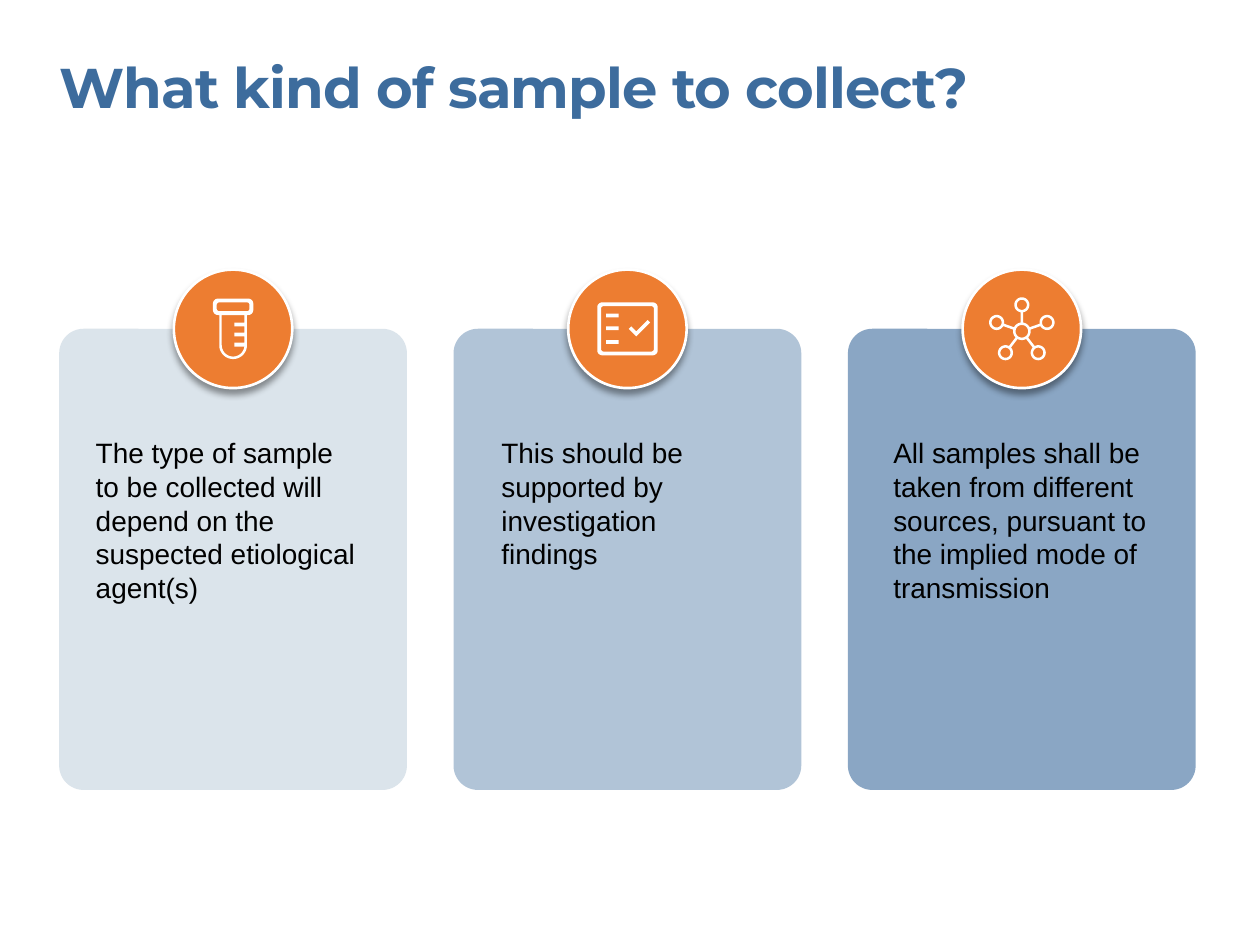
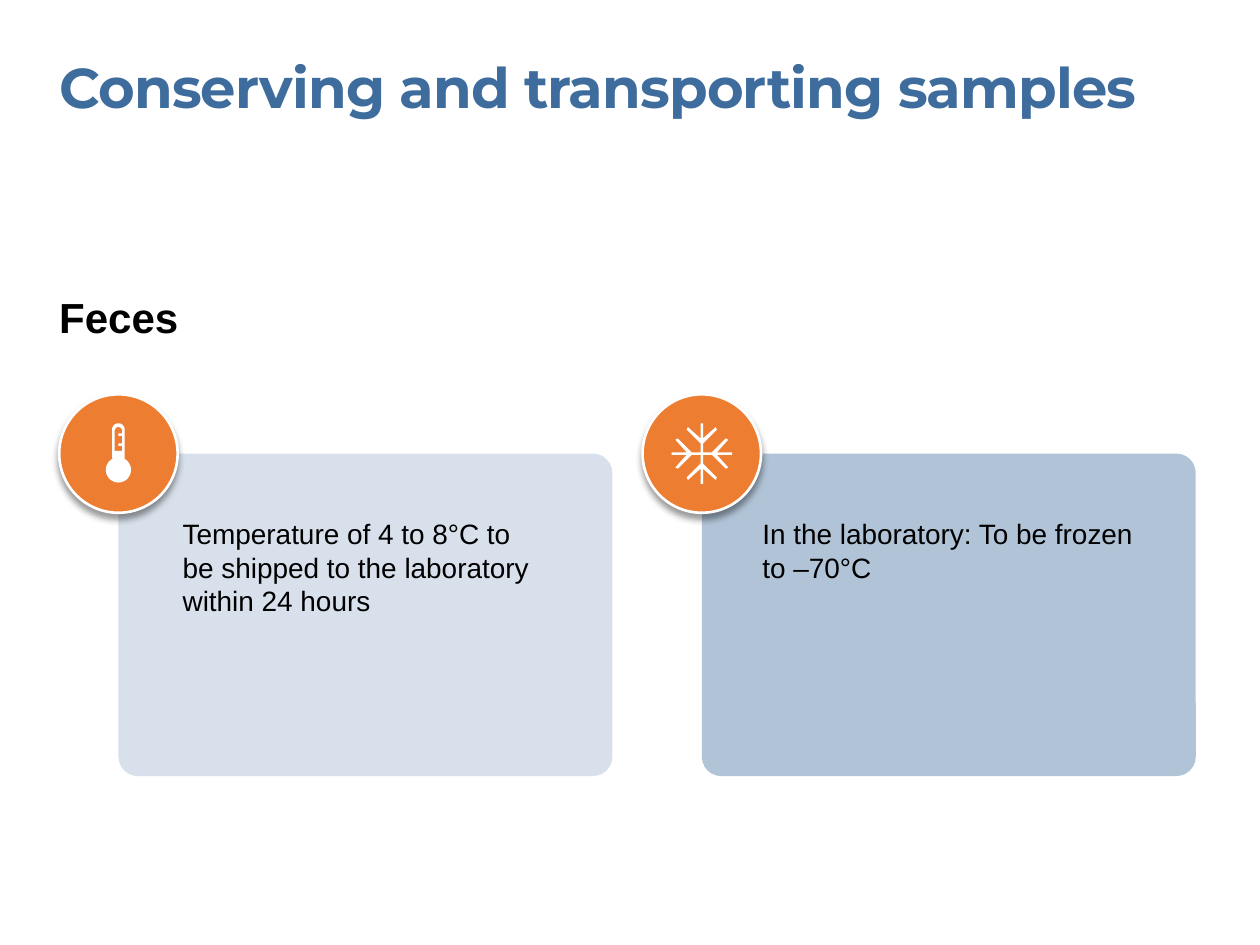
from dataclasses import dataclass
from math import atan2, cos, degrees, hypot, radians, sin
from typing import Any

from lxml import etree
from pptx import Presentation
from pptx import util as u
from pptx.dml.color import RGBColor
from pptx.enum import shapes, text
from pptx.oxml.ns import qn

PX = 9144  # EMU per px, 100 px to the inch
BADGE = 94
COLOURS = {
    "blue": "3D6C9D",
    "pale": "DBE4EB",
    "orange": "ED7D31",
    "white": "FFFFFF",
    "black": "000000",
}
FRAME_FORMAT = {
    "margin_left": 0,
    "margin_top": 0,
    "margin_right": 0,
    "margin_bottom": 0,
    "word_wrap": True,
    "auto_size": text.MSO_AUTO_SIZE.SHAPE_TO_FIT_TEXT,
}
TITLE_FONT = {"name": "Montserrat", "size": u.Pt(32), "bold": True}
HEADING_FONT = {"name": "Arial", "size": u.Pt(24), "bold": True}
BODY_FONT = {"name": "Arial", "size": u.Pt(16), "bold": False}

Point = tuple[float, float]
Contour = list[Point]


@dataclass(frozen=True)
class Box:
    left: int
    top: int
    width: int
    height: int

    def emu(self) -> list[int]:
        return [v * PX for v in (self.left, self.top, self.width, self.height)]


@dataclass(frozen=True)
class Card:
    panel: Box
    corner: float
    colour: str
    opacity: int
    badge_x: int
    icon: list[Contour]
    words: str
    words_box: Box


def set_all(target: Any, values: dict[str, Any]) -> None:
    for name, value in values.items():
        setattr(target, name, value)


def rgb(colour: str) -> RGBColor:
    return RGBColor.from_string(COLOURS[colour])


def paint(shape: Any, colour: str) -> None:
    """Give a shape a plain fill, with neither line nor shadow."""
    shape.shadow.inherit = False
    shape.fill.solid()
    shape.fill.fore_color.rgb = rgb(colour)
    shape.line.fill.background()


def set_alpha(colour_element: Any, percent: int) -> None:
    etree.SubElement(colour_element, qn("a:alpha"), val=str(percent * 1000))


# Icon contours are measured from the centre of the badge;
# a contour inside another one cuts a hole.
def arc(x: float, y: float, radius: float, start: int, end: int) -> Contour:
    """Points from one angle to another, in degrees, clockwise from the right."""
    steps = max(4, abs(end - start) // 10)
    angles = [radians(start + (end - start) * i / steps) for i in range(steps + 1)]
    return [(x + radius * cos(a), y + radius * sin(a)) for a in angles]


def rectangle(left: int, top: int, right: int, bottom: int) -> Contour:
    return [(left, top), (right, top), (right, bottom), (left, bottom)]


def rounded(left: int, top: int, right: int, bottom: int, radius: int) -> Contour:
    centres = rectangle(left + radius, top + radius, right - radius, bottom - radius)
    return [
        point
        for i, (x, y) in enumerate(centres)
        for point in arc(x, y, radius, 180 + 90 * i, 270 + 90 * i)
    ]


def ring(x: int, y: int, outer: int, inner: int) -> list[Contour]:
    return [arc(x, y, radius, 0, 350) for radius in (outer, inner)]


def test_tube() -> list[Contour]:
    glass = [
        [(-r, -11), (r, -11), *arc(0, 13, r, 0, 180)] for r in (11, 9)
    ]
    marks = [rectangle(1, y, 9, y + 3) for y in (-5, 3, 11)]
    return [rounded(-16, -24, 16, -11, 4), rounded(-13, -21, 13, -14, 2), *glass, *marks]


def checklist() -> list[Contour]:
    lines = [rectangle(-17, y, -7, y + 3) for y in (-12, -2, 9)]
    tick = [(7, 6), (18, -5), (16, -7), (7, 2), (3, -2), (1, 0)]
    return [rounded(-24, -21, 24, 21, 4), rounded(-21, -18, 21, 18, 2), *lines, tick]


def network() -> list[Contour]:
    hub_y, hub_radius, node_radius = 2, 7, 6
    contours = ring(0, hub_y, hub_radius, 5)
    for x, y in ((0, -19), (20, -5), (13, 19), (-13, 19), (-20, -5)):
        reach = hypot(x, y - hub_y)
        dx, dy = x / reach, (y - hub_y) / reach
        near, far = hub_radius, reach - node_radius
        spoke = [
            (dx * along - dy * side, hub_y + dy * along + dx * side)
            for along, side in ((near, -1), (near, 1), (far, 1), (far, -1))
        ]
        contours += [*ring(x, y, node_radius, 4), spoke]
    return contours


def thermometer() -> list[Contour]:
    neck = round(degrees(atan2(-9, 5)))
    body = arc(0, -19, 5, 180, 360) + arc(0, 13, 10, neck, 180 - neck)
    bore = [*arc(0, -18, 3, 180, 360), (3, -2), (-3, -2)]
    marks = [rectangle(0, y, 3, y + 2) for y in (-16, -8)]
    return [body, bore, *marks]


def snowflake() -> list[Contour]:
    quarter = [(1, -24), (1, -12), (11, -21), (12, -19), (1, -8), (1, -1),
               (8, -1), (19, -12), (21, -11), (12, -1), (24, -1)]
    outline: Contour = []
    for _ in range(4):
        outline += quarter
        quarter = [(-y, x) for x, y in quarter]
    return [outline]


def add_text(slide: Any, box: Box, words: str, font: dict[str, Any],
             colour: str = "black") -> Any:
    frame = slide.shapes.add_textbox(*box.emu()).text_frame
    set_all(frame, FRAME_FORMAT)
    run = frame.paragraphs[0].add_run()
    run.text = words
    set_all(run.font, font)
    run.font.color.rgb = rgb(colour)
    return run


def add_title(slide: Any, words: str, height: int) -> None:
    run = add_text(slide, Box(47, 42, 855, height), words, TITLE_FONT, "blue")
    run.font._element.set("spc", "-50")


def add_panel(slide: Any, card: Card) -> None:
    panel = slide.shapes.add_shape(
        shapes.MSO_SHAPE.ROUNDED_RECTANGLE, *card.panel.emu())
    panel.adjustments[0] = card.corner
    paint(panel, card.colour)
    if card.opacity < 100:
        set_alpha(panel._element.spPr.find(".//" + qn("a:srgbClr")), card.opacity)


def add_badge(slide: Any, card: Card) -> None:
    """Draw the circle centred on the panel's top edge, with its icon."""
    centre_y = card.panel.top
    circle = Box(card.badge_x - BADGE // 2, centre_y - BADGE // 2, BADGE, BADGE)
    badge = slide.shapes.add_shape(shapes.MSO_SHAPE.OVAL, *circle.emu())
    paint(badge, "orange")
    badge.line.color.rgb = rgb("white")
    badge.line.width = u.Pt(1.5)
    shadow = etree.SubElement(
        badge._element.spPr.find(qn("a:effectLst")), qn("a:outerShdw"),
        blurRad=str(u.Pt(4)), dist=str(u.Pt(3)), dir="5400000",
        algn="t", rotWithShape="0")
    set_alpha(etree.SubElement(shadow, qn("a:srgbClr"), val=COLOURS["black"]), 40)

    placed = [
        [((card.badge_x + x) * PX, (centre_y + y) * PX) for x, y in contour]
        for contour in card.icon
    ]
    builder = slide.shapes.build_freeform(*placed[0][0])
    for contour in placed:
        builder.move_to(*contour[0])
        builder.add_line_segments(contour[1:], close=True)
    paint(builder.convert_to_shape(), "white")


def add_cards(slide: Any, cards: list[Card]) -> None:
    for card in cards:
        add_panel(slide, card)
    for card in cards:
        add_badge(slide, card)
        add_text(slide, card.words_box, card.words, BODY_FONT)


def build_sample_kinds(slide: Any) -> None:
    add_title(slide, "What kind of sample to collect?", 54)
    contents = [
        ("pale", 100, test_tube(), Box(76, 346, 212, 135),
         "The type of sample to be collected will depend on the suspected "
         "etiological agent(s)"),
        ("blue", 40, checklist(), Box(398, 346, 204, 108),
         "This should be supported by investigation findings"),
        ("blue", 60, network(), Box(709, 346, 204, 135),
         "All samples shall be taken from different sources, pursuant to "
         "the implied mode of transmission"),
    ]
    cards = []
    for i, (colour, opacity, icon, words_box, words) in enumerate(contents):
        panel = Box(47 + 313 * i, 261, 276, 366)
        cards.append(Card(panel, 0.07, colour, opacity,
                          panel.left + panel.width // 2, icon, words, words_box))
    add_cards(slide, cards)


def build_conserving(slide: Any) -> None:
    add_title(slide, "Conserving and transporting samples", 108)
    add_text(slide, Box(47, 231, 785, 40), "Feces", HEADING_FONT)
    contents = [
        (20, thermometer(), Box(145, 410, 290, 81),
         "Temperature of 4 to 8°C to be shipped to the laboratory within 24 hours"),
        (40, snowflake(), Box(605, 410, 315, 54),
         "In the laboratory: To be frozen to –70°C"),
    ]
    cards = []
    for i, (opacity, icon, words_box, words) in enumerate(contents):
        panel = Box(94 + 463 * i, 360, 392, 256)
        cards.append(Card(panel, 0.06, "blue", opacity, panel.left,
                          icon, words, words_box))
    add_cards(slide, cards)


def main() -> None:
    deck = Presentation()
    deck.slide_width, deck.slide_height = 1000 * PX, 750 * PX
    blank = deck.slide_layouts[6]
    for build in (build_sample_kinds, build_conserving):
        build(deck.slides.add_slide(blank))
    deck.save("out.pptx")


if __name__ == "__main__":
    main()
